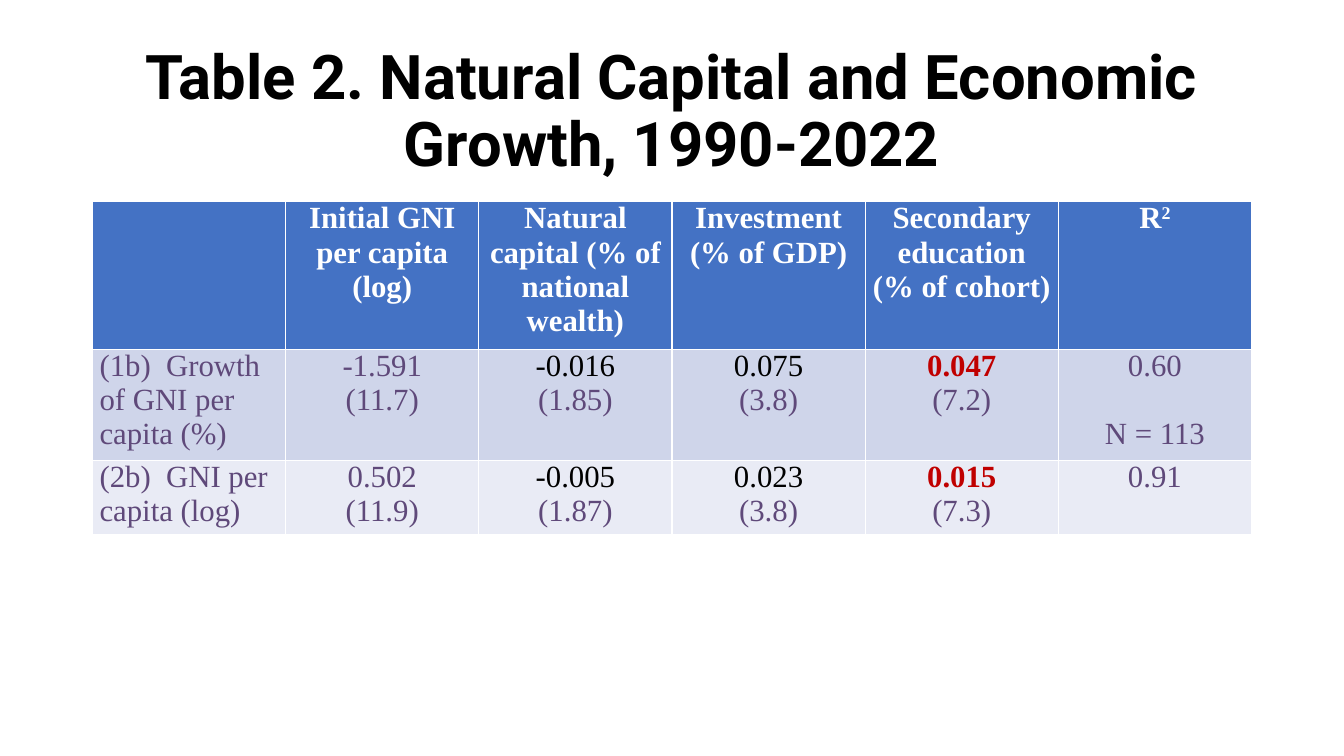
import pptx
import pptx.util
import pptx.dml.color
import pptx.enum.text

Cm = pptx.util.Cm
Pt = pptx.util.Pt
ALIGN = pptx.enum.text.PP_ALIGN


def tint(code):
    return pptx.dml.color.RGBColor.from_string(code)


def style(para, font, size, color, bold):
    for run in para.runs:
        run.font.name = font
        run.font.size = Pt(size)
        run.font.bold = bold
        run.font.color.rgb = tint(color)


deck = pptx.Presentation()
deck.slide_width = Cm(33.87)
deck.slide_height = Cm(19.05)
slide = deck.slides.add_slide(deck.slide_layouts[6])

title = slide.shapes.add_textbox(Cm(2.33), Cm(1.01), Cm(29.21), Cm(3.68))
frame = title.text_frame
frame.word_wrap = True
frame.vertical_anchor = pptx.enum.text.MSO_ANCHOR.MIDDLE
frame.text = "Table 2. Natural Capital and Economic Growth, 1990-2022"
head = frame.paragraphs[0]
head.alignment = ALIGN.CENTER
head.line_spacing = 0.9
style(head, "Roboto", 44, "000000", True)

rows = [
    ["", "Initial GNI per capita (log)", "Natural capital (% of national wealth)",
     "Investment (% of GDP)", "Secondary education\n(% of cohort)", "R"],
    ["(1b)  Growth of GNI per capita (%)", "-1.591\n(11.7)", "-0.016\n(1.85)",
     "0.075\n(3.8)", "0.047\n(7.2)", "0.60\nN = 113"],
    ["(2b)  GNI per capita (log)", "0.502\n(11.9)", "-0.005\n(1.87)",
     "0.023\n(3.8)", "0.015\n(7.3)", "0.91"],
]
fills = ["4472C4", "CFD5EA", "E9EBF5"]
highs = [3.41, 2.57, 1.72]
marks = {2: "000000", 3: "000000", 4: "C00000"}

grid = slide.shapes.add_table(
    3, 6, Cm(2.33), Cm(5.08), Cm(29.21), Cm(sum(highs))).table
for col in grid.columns:
    col.width = Cm(29.21 / 6)

for r, row in enumerate(rows):
    grid.rows[r].height = Cm(highs[r])
    for c, text in enumerate(row):
        cell = grid.cell(r, c)
        cell.fill.solid()
        cell.fill.fore_color.rgb = tint(fills[r])
        cell.margin_left = cell.margin_right = Cm(0.18)
        cell.margin_top = cell.margin_bottom = 0
        cell.text_frame.text = text
        if text == "R":
            power = cell.text_frame.paragraphs[0].add_run()
            power.text = "2"
            power._r.get_or_add_rPr().set("baseline", "30000")
        for n, para in enumerate(cell.text_frame.paragraphs):
            para.alignment = ALIGN.LEFT if r and c == 0 else ALIGN.CENTER
            color = "5F497A"
            if r == 0:
                color = "FFFFFF"
            elif n == 0:
                color = marks.get(c, color)
            style(para, "Times New Roman", 22, color, r == 0 or color == "C00000")

grid.cell(1, 5).text_frame.paragraphs[1].space_before = Pt(24)

deck.save("out.pptx")
